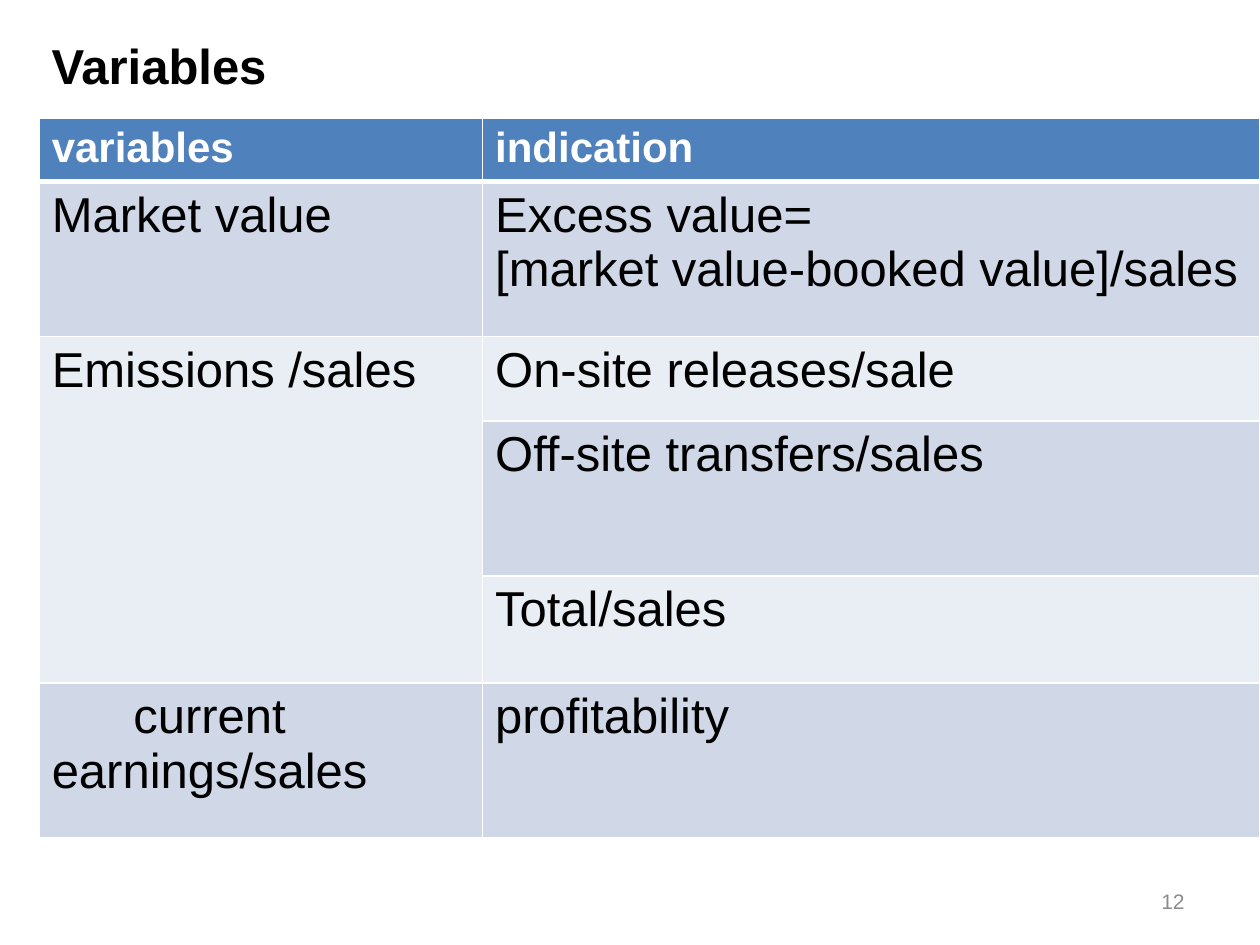
from pptx import Presentation
from pptx.dml.color import RGBColor
from pptx.enum.text import MSO_ANCHOR, PP_ALIGN
from pptx.oxml.ns import qn
from pptx.util import Pt
from lxml import etree

LEFT, RIGHT = PP_ALIGN.LEFT, PP_ALIGN.RIGHT
TOP, MIDDLE = MSO_ANCHOR.TOP, MSO_ANCHOR.MIDDLE

BLACK = RGBColor(0x00, 0x00, 0x00)
WHITE = RGBColor(0xFF, 0xFF, 0xFF)
GREY = RGBColor(0x8C, 0x8C, 0x8C)
HEADER = RGBColor(0x4F, 0x81, 0xBD)
BAND_DARK = RGBColor(0xD0, 0xD8, 0xE8)
BAND_LIGHT = RGBColor(0xE9, 0xED, 0xF4)

COL_WIDTHS = [253.4, 444.2]
ROW_HEIGHTS = [35, 88.6, 48.2, 88.6, 61.2, 88.6]
ROWS = [
    ("variables", "indication"),
    ("Market value", "Excess value=\n[market value-booked value]/sales"),
    ("Emissions /sales", "On-site releases/sale"),
    ("", "Off-site transfers/sales"),
    ("", "Total/sales"),
    ("current earnings/sales", "profitability"),
]
EMISSIONS_ROWS = (2, 4)
EARNINGS_ROW = 5


def write(tf, text, size=28, color=BLACK, bold=False, align=LEFT, indent=0):
    """Fill a text frame, one paragraph for each line of text."""
    tf.word_wrap = True
    for i, line in enumerate(text.split("\n")):
        p = tf.paragraphs[0] if i == 0 else tf.add_paragraph()
        p.alignment = align
        if indent:
            pPr = p._p.get_or_add_pPr()
            pPr.set("marL", "0")
            pPr.set("indent", str(Pt(indent)))
        r = p.add_run()
        r.text = line
        r.font.name = "Arial"
        r.font.size = Pt(size)
        r.font.bold = bold
        r.font.color.rgb = color


def add_text(s, box, text, anchor=TOP, **fmt):
    tf = s.shapes.add_textbox(*map(Pt, box)).text_frame
    tf.vertical_anchor = anchor
    write(tf, text, **fmt)


def set_borders(cell, **widths):
    """Draw white cell borders; they must come before the fill in tcPr."""
    tcPr = cell._tc.get_or_add_tcPr()
    for i, (side, width) in enumerate(widths.items()):
        ln = etree.Element(qn(f"a:ln{side}"), w=str(Pt(width)))
        fill = etree.SubElement(ln, qn("a:solidFill"))
        etree.SubElement(fill, qn("a:srgbClr"), val=str(WHITE))
        tcPr.insert(i, ln)


def add_variables_table(s, left, top):
    frame = s.shapes.add_table(len(ROWS), len(COL_WIDTHS), Pt(left), Pt(top),
                               Pt(sum(COL_WIDTHS)), Pt(sum(ROW_HEIGHTS)))
    table = frame.table
    for column, width in zip(table.columns, COL_WIDTHS):
        column.width = Pt(width)
    for row, height in zip(table.rows, ROW_HEIGHTS):
        row.height = Pt(height)

    # Cells: header row, then alternating bands
    for i, texts in enumerate(ROWS):
        header = i == 0
        band = HEADER if header else BAND_DARK if i % 2 else BAND_LIGHT
        for j, text in enumerate(texts):
            cell = table.cell(i, j)
            cell.fill.solid()
            cell.fill.fore_color.rgb = band
            set_borders(cell, L=1, R=1, T=3 if i == 1 else 1,
                        B=3 if header else 1)
            if header:
                write(cell.text_frame, text, size=24, color=WHITE, bold=True)
            elif text:
                indented = (i, j) == (EARNINGS_ROW, 0)
                write(cell.text_frame, text, indent=46.7 if indented else 0)

    # Emissions label spans its three measures
    first, last = EMISSIONS_ROWS
    table.cell(first, 0).merge(table.cell(last, 0))


def main():
    prs = Presentation()
    prs.slide_width, prs.slide_height = Pt(720), Pt(540)
    s = prs.slides.add_slide(prs.slide_layouts[6])

    # Page number, title and table
    add_text(s, (516, 500.5, 168, 28.75), "12", anchor=MIDDLE,
             size=12, color=GREY, align=RIGHT)
    add_text(s, (22.4, 16.8, 208, 41), "Variables", bold=True)
    add_variables_table(s, 22.4, 67.8)

    prs.save("out.pptx")


if __name__ == "__main__":
    main()
